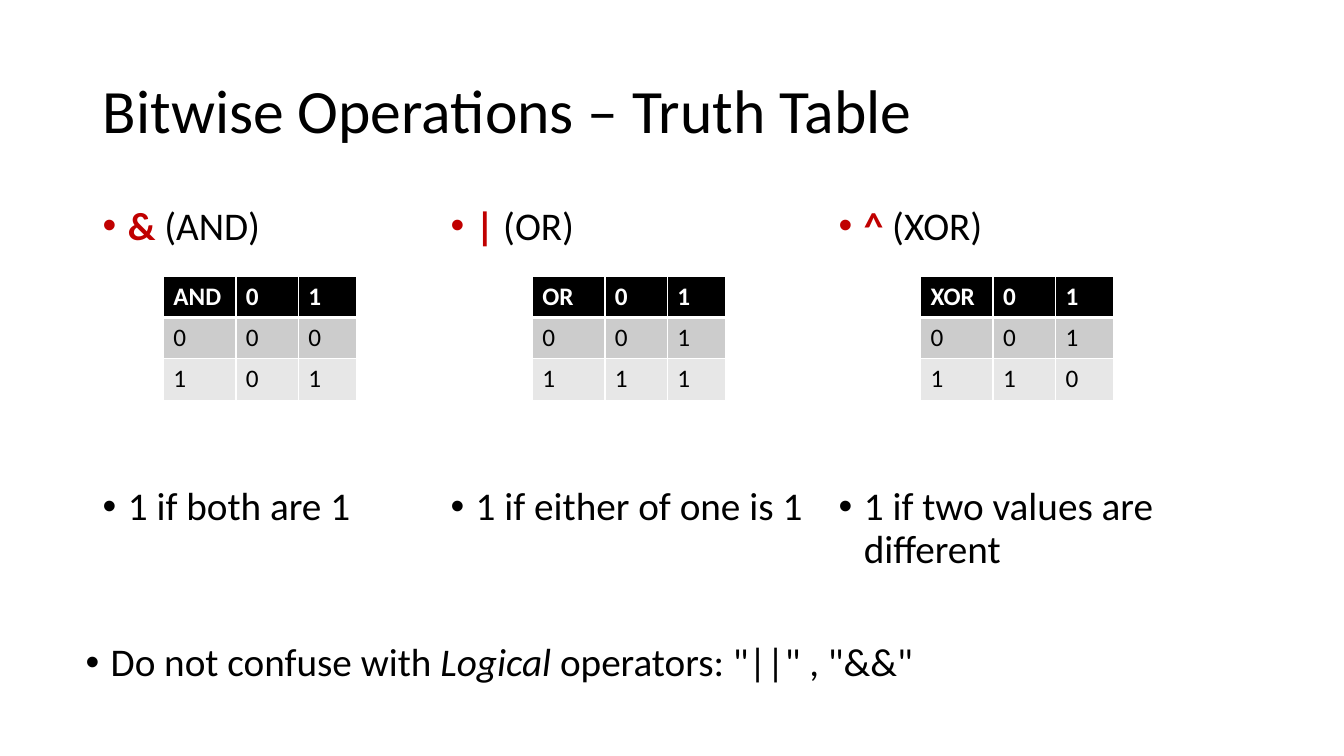
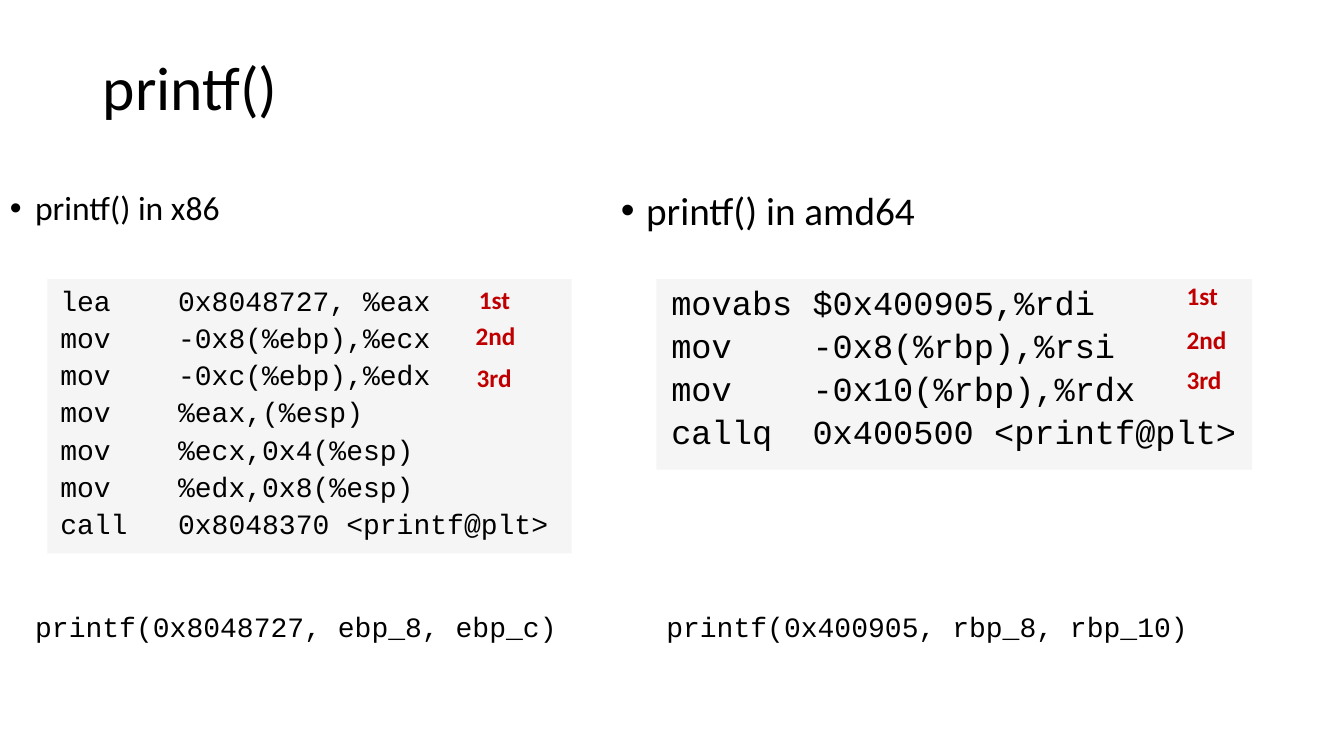
"""Build two slides: bitwise truth tables, and printf() argument passing."""
from dataclasses import dataclass
from typing import Any, Optional

from lxml import etree
from pptx import Presentation
from pptx.dml.color import RGBColor
from pptx.enum.shapes import MSO_SHAPE
from pptx.enum.text import MSO_ANCHOR, MSO_AUTO_SIZE, PP_ALIGN
from pptx.oxml.ns import qn
from pptx.util import Emu, Pt

EMU_PER_PX = 9144
RECTANGLE = MSO_SHAPE.RECTANGLE
MIDDLE = MSO_ANCHOR.MIDDLE
LEFT = PP_ALIGN.LEFT
NO_FIT, GROW = MSO_AUTO_SIZE.NONE, MSO_AUTO_SIZE.SHAPE_TO_FIT_TEXT
TITLE_ONLY = 5


@dataclass(frozen=True)
class Theme:
    sans: str = "Calibri"
    mono: str = "Courier New"
    ink: str = "000000"
    paper: str = "FFFFFF"
    accent: str = "C00000"
    panel: str = "E7E6E6"
    panel_alpha: int = 37
    row_fills: tuple[str, ...] = ("000000", "CCCCCC", "E7E7E7")
    title_size: int = 44
    body_size: int = 28
    small_body_size: int = 24
    call_size: int = 20
    label_size: int = 18
    line_spacing: float = 0.9
    code_leading: float = 1.08
    code_gap: int = 5


THEME = Theme()


@dataclass(frozen=True)
class Box:
    left: int
    top: int
    width: int
    height: int

    def emu(self) -> tuple[Emu, ...]:
        return tuple(px(v) for v in (self.left, self.top, self.width, self.height))


@dataclass(frozen=True)
class Span:
    text: str
    color: str = THEME.ink
    bold: bool = False
    italic: bool = False


@dataclass(frozen=True)
class Operator:
    symbol: str
    name: str
    rule: str
    body: Box
    table_left: int
    results: tuple[str, str]


@dataclass(frozen=True)
class Listing:
    heading: str
    heading_size: int
    body: Box
    panel: Box
    code: tuple[str, ...]
    code_size: int
    code_before: int
    call: str
    call_left: int
    labels: tuple[tuple[int, int], ...]


OPERATORS = (
    Operator("&", "AND", "1 if both are 1", Box(92, 200, 333, 476), 162, ("00", "01")),
    Operator("|", "OR", "1 if either of one is 1", Box(437, 200, 374, 476), 528, ("01", "11")),
    Operator("^", "XOR", "1 if two values are different", Box(822, 200, 374, 393), 913, ("01", "10")),
)
RULE_BEFORE = 170
TABLE_TOP, ROW_HEIGHT = 274, 41
COLUMN_WIDTHS = (72, 62, 58)

LISTINGS = (
    Listing(
        "printf() in x86", THEME.small_body_size,
        Box(0, 185, 664, 476), Box(47, 277, 520, 272),
        (
            "lea    0x8048727, %eax",
            "mov    -0x8(%ebp),%ecx",
            "mov    -0xc(%ebp),%edx",
            "mov    %eax,(%esp)",
            "mov    %ecx,0x4(%esp)",
            "mov    %edx,0x8(%esp)",
            "call   0x8048370 <printf@plt>",
        ),
        20, 42, "printf(0x8048727, ebp_8, ebp_c)", 25,
        ((465, 277), (462, 313), (463, 355)),
    ),
    Listing(
        "printf() in amd64", THEME.body_size,
        Box(606, 185, 728, 476), Box(651, 277, 591, 189),
        (
            "movabs $0x400905,%rdi",
            "mov    -0x8(%rbp),%rsi",
            "mov    -0x10(%rbp),%rdx",
            "callq  0x400500 <printf@plt>",
        ),
        24, 37, "printf(0x400905, rbp_8, rbp_10)", 651,
        ((1167, 273), (1167, 317), (1167, 357)),
    ),
)
ORDINALS = (("1st", 51), ("2nd", 60), ("3rd", 55))


def px(value: int) -> Emu:
    return Emu(value * EMU_PER_PX)


def set_font(font: Any, size: int, color: Optional[str] = THEME.ink,
             name: str = THEME.sans, bold: Optional[bool] = None) -> None:
    font.name, font.size, font.bold = name, Pt(size), bold
    if color:
        font.color.rgb = RGBColor.from_string(color)


def add_title(slide: Any, text: str, top: int) -> None:
    title = slide.shapes.title
    title.left, title.top, title.width, title.height = Box(92, top, 1150, 145).emu()
    frame = title.text_frame
    frame.text = text
    frame.auto_size, frame.vertical_anchor = NO_FIT, MIDDLE
    paragraph = frame.paragraphs[0]
    paragraph.alignment, paragraph.line_spacing = LEFT, THEME.line_spacing
    set_font(paragraph.font, THEME.title_size)


def add_text_area(slide: Any, box: Box, wrap: bool = True) -> Any:
    frame = slide.shapes.add_textbox(*box.emu()).text_frame
    frame.word_wrap = wrap
    frame.auto_size = NO_FIT if wrap else GROW
    return frame


def add_bullet(paragraph: Any, spans: tuple[Span, ...], size: int) -> None:
    properties = paragraph._p.get_or_add_pPr()
    properties.set("marL", str(px(25)))
    properties.set("indent", str(px(-25)))
    etree.SubElement(properties, qn("a:buFont")).set("typeface", "Arial")
    etree.SubElement(properties, qn("a:buChar")).set("char", "•")
    paragraph.line_spacing = THEME.line_spacing
    uniform = len(spans) == 1
    set_font(paragraph.font, size, spans[0].color if uniform else None)
    for span in spans:
        run = paragraph.add_run()
        run.text = span.text
        if not uniform:
            run.font.color.rgb = RGBColor.from_string(span.color)
            run.font.bold, run.font.italic = span.bold, span.italic


def add_label(slide: Any, box: Box, text: str, size: int, color: str,
              name: str = THEME.sans, bold: bool = False) -> None:
    paragraph = add_text_area(slide, box, wrap=False).paragraphs[0]
    paragraph.text = text
    set_font(paragraph.font, size, color, name, bold)


def set_borders(cell: Any, header: bool) -> None:
    properties = cell._tc.get_or_add_tcPr()
    for position, side in enumerate(("lnL", "lnR", "lnT", "lnB")):
        line = etree.Element(qn(f"a:{side}"))
        line.set("w", str(Pt(3 if header and side == "lnB" else 1)))
        fill = etree.SubElement(line, qn("a:solidFill"))
        etree.SubElement(fill, qn("a:srgbClr")).set("val", THEME.paper)
        properties.insert(position, line)


def add_truth_table(slide: Any, operator: Operator) -> None:
    rows = ((operator.name, "0", "1"), ("0", *operator.results[0]), ("1", *operator.results[1]))
    box = Box(operator.table_left, TABLE_TOP, sum(COLUMN_WIDTHS), ROW_HEIGHT * len(rows))
    table = slide.shapes.add_table(len(rows), len(COLUMN_WIDTHS), *box.emu()).table
    for column, width in zip(table.columns, COLUMN_WIDTHS):
        column.width = px(width)
    for r, values in enumerate(rows):
        header = r == 0
        table.rows[r].height = px(ROW_HEIGHT)
        for c, value in enumerate(values):
            cell = table.cell(r, c)
            cell.text = value
            cell.fill.solid()
            cell.fill.fore_color.rgb = RGBColor.from_string(THEME.row_fills[r])
            set_font(cell.text_frame.paragraphs[0].font, THEME.label_size,
                     THEME.paper if header else THEME.ink, bold=header)
            set_borders(cell, header)


def add_panel(slide: Any, box: Box) -> None:
    panel = slide.shapes.add_shape(RECTANGLE, *box.emu())
    panel.shadow.inherit = False
    panel.line.fill.background()
    panel.fill.solid()
    panel.fill.fore_color.rgb = RGBColor.from_string(THEME.panel)
    color = panel._element.spPr.find(qn("a:solidFill")).find(qn("a:srgbClr"))
    etree.SubElement(color, qn("a:alpha")).set("val", str(THEME.panel_alpha * 1000))


def add_listing(slide: Any, listing: Listing) -> None:
    add_panel(slide, listing.panel)
    frame = add_text_area(slide, listing.body)
    add_bullet(frame.paragraphs[0], (Span(listing.heading),), listing.heading_size)
    for number, instruction in enumerate(listing.code):
        paragraph = frame.add_paragraph()
        paragraph.text = instruction
        paragraph._p.get_or_add_pPr().set("marL", str(px(50)))
        paragraph.line_spacing = Pt(listing.code_size * THEME.code_leading)
        paragraph.space_before = Pt(THEME.code_gap if number else listing.code_before)
        set_font(paragraph.font, listing.code_size, name=THEME.mono)
    for (ordinal, width), (left, top) in zip(ORDINALS, listing.labels):
        add_label(slide, Box(left, top, width, 40), ordinal, THEME.label_size,
                  THEME.accent, bold=True)
    add_label(slide, Box(listing.call_left, 600, 542, 44), listing.call,
              THEME.call_size, THEME.ink, THEME.mono)


def build_truth_tables(slide: Any) -> None:
    add_title(slide, "Bitwise Operations – Truth Table", 40)
    for operator in OPERATORS:
        frame = add_text_area(slide, operator.body)
        heading = (Span(operator.symbol, THEME.accent, bold=True), Span(f" ({operator.name})"))
        add_bullet(frame.paragraphs[0], heading, THEME.body_size)
        rule = frame.add_paragraph()
        add_bullet(rule, (Span(operator.rule),), THEME.body_size)
        rule.space_before = Pt(RULE_BEFORE)
        add_truth_table(slide, operator)
    warning = (Span("Do not confuse with "), Span("Logical", italic=True),
               Span(' operators: "||" , "&&"'))
    add_bullet(add_text_area(slide, Box(75, 633, 1160, 77)).paragraphs[0],
               warning, THEME.body_size)


def build_printf(slide: Any) -> None:
    add_title(slide, "printf()", 17)
    for listing in LISTINGS:
        add_listing(slide, listing)


def main() -> None:
    deck = Presentation()
    deck.slide_width, deck.slide_height = px(1333), px(750)
    for build in (build_truth_tables, build_printf):
        build(deck.slides.add_slide(deck.slide_layouts[TITLE_ONLY]))
    deck.save("out.pptx")


if __name__ == "__main__":
    main()
